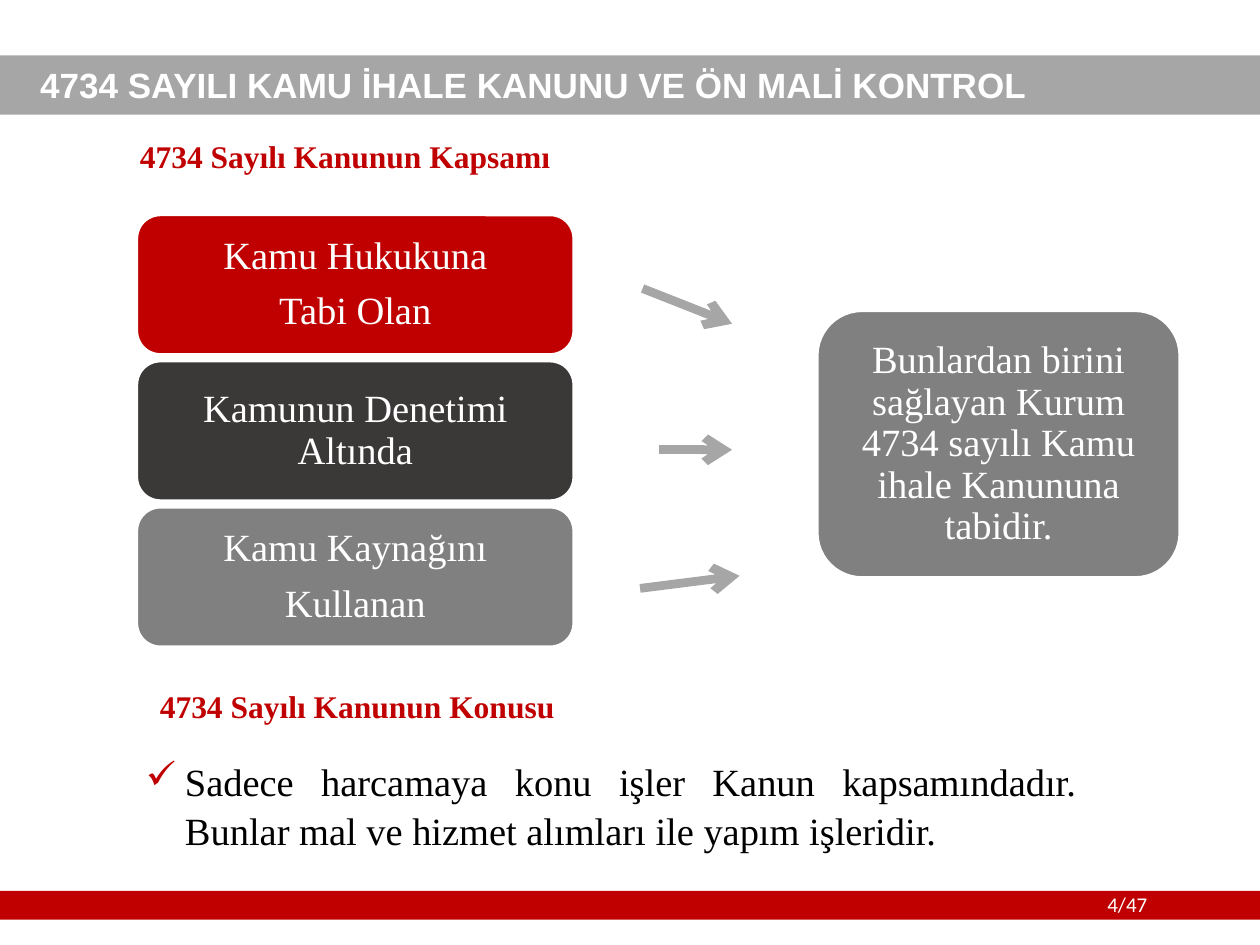
from lxml import etree
from pptx import Presentation
from pptx.dml.color import RGBColor
from pptx.enum.shapes import MSO_CONNECTOR, MSO_SHAPE
from pptx.enum.text import MSO_ANCHOR, MSO_AUTO_SIZE, PP_ALIGN
from pptx.oxml.ns import qn
from pptx.util import Inches, Pt

CENTER, JUSTIFY, LEFT = PP_ALIGN.CENTER, PP_ALIGN.JUSTIFY, PP_ALIGN.LEFT
TOP, MIDDLE = MSO_ANCHOR.TOP, MSO_ANCHOR.MIDDLE
RECTANGLE, ROUNDED = MSO_SHAPE.RECTANGLE, MSO_SHAPE.ROUNDED_RECTANGLE
STRAIGHT, NO_FIT = MSO_CONNECTOR.STRAIGHT, MSO_AUTO_SIZE.NONE

RED, DARK, GRAY, SILVER = "C00000", "3B3838", "808080", "A6A6A6"
WHITE, BLACK = "FFFFFF", "000000"
SERIF = "Times New Roman"

HEADING = {"name": SERIF, "size": Pt(18), "bold": True}
BODY = {"name": SERIF, "size": Pt(22), "bold": False}
BANNER = {"name": "Arial", "size": Pt(20), "bold": True}
NUMBER = {"name": "Calibri", "size": Pt(12), "bold": False}

CONDITION_LEFT, CONDITION_TOP, CONDITION_STEP = 1.09, 1.71, 1.16
CONDITIONS = [
    (["Kamu Hukukuna", "Tabi Olan"], RED),
    (["Kamunun Denetimi Altında"], DARK),
    (["Kamu Kaynağını", "Kullanan"], GRAY),
]
ARROWS = [(5.1, 2.29, 5.81, 2.57), (5.23, 3.57, 5.81, 3.57), (5.08, 4.67, 5.87, 4.57)]


def color(value):
    return RGBColor.from_string(value)


def set_attributes(target, values):
    for name, value in values.items():
        setattr(target, name, value)


def place(shape, left, top, width, height):
    lengths = {"left": left, "top": top, "width": width, "height": height}
    set_attributes(shape, {name: Inches(value) for name, value in lengths.items()})


def write(shape, lines, style, ink, align=LEFT, anchor=TOP, spacing=0.9, inset=(0.1, 0.05)):
    frame = shape.text_frame
    side, edge = (Inches(value) for value in inset)
    set_attributes(frame, {
        "word_wrap": True, "auto_size": NO_FIT, "vertical_anchor": anchor,
        "margin_left": side, "margin_right": side,
        "margin_top": edge, "margin_bottom": edge,
    })
    for index, line in enumerate(lines):
        para = frame.add_paragraph() if index else frame.paragraphs[0]
        set_attributes(para, {
            "alignment": align, "line_spacing": spacing,
            "space_before": Pt(8 if index else 0), "space_after": Pt(0),
        })
        span = para.add_run()
        span.text = line
        set_attributes(span.font, style)
        span.font.color.rgb = color(ink)


def add_text(page, area, lines, style, ink, **options):
    box = page.shapes.add_textbox(*(Inches(value) for value in area))
    write(box, lines, style, ink, **options)
    return box


def add_panel(page, kind, area, fill, outline=None):
    panel = page.shapes.add_shape(kind, *(Inches(value) for value in area))
    panel.shadow.inherit = False
    panel.fill.solid()
    panel.fill.fore_color.rgb = color(fill)
    if outline:
        panel.line.color.rgb = color(outline)
        panel.line.width = Pt(1)
    else:
        panel.line.fill.background()
    return panel


def add_card(page, area, lines, fill, inset):
    card = add_panel(page, ROUNDED, area, fill, WHITE)
    write(card, lines, BODY, WHITE, align=CENTER, anchor=MIDDLE, inset=inset)


def add_arrow(page, ends):
    arrow = page.shapes.add_connector(STRAIGHT, *(Inches(value) for value in ends))
    arrow.line.color.rgb = color(SILVER)
    arrow.line.width = Pt(5)
    etree.SubElement(arrow.line._get_or_add_ln(), qn("a:tailEnd"), type="arrow")
    etree.SubElement(arrow._element.spPr, qn("a:effectLst"))


def add_check(para, ink):
    properties = para._p.get_or_add_pPr()
    properties.set("marL", str(Inches(0.31)))
    properties.set("indent", str(-Inches(0.31)))
    bullet_color = etree.SubElement(properties, qn("a:buClr"))
    etree.SubElement(bullet_color, qn("a:srgbClr"), val=ink)
    etree.SubElement(properties, qn("a:buChar"), char="✓")


def main():
    deck = Presentation()
    deck.slide_width, deck.slide_height = Inches(10), Inches(7.5)
    page = deck.slides.add_slide(deck.slide_layouts[5])

    add_panel(page, RECTANGLE, (0, 7.07, 10, 0.23), RED)
    add_panel(page, RECTANGLE, (0, 0.44, 10, 0.47), SILVER)
    add_text(page, (0.22, 0.46, 9.05, 0.47),
             ["4734 SAYILI KAMU İHALE KANUNU VE ÖN MALİ KONTROL"],
             BANNER, WHITE, anchor=MIDDLE)
    add_text(page, (8.69, 7.03, 0.93, 0.3), ["4/47"], NUMBER, WHITE, spacing=1.0)

    title = page.shapes.title
    place(title, 1.01, 1.07, 8.99, 0.47)
    write(title, ["4734 Sayılı Kanunun Kapsamı"], HEADING, RED)

    for row, (lines, fill) in enumerate(CONDITIONS):
        area = (CONDITION_LEFT, CONDITION_TOP + row * CONDITION_STEP, 3.46, 1.1)
        add_card(page, area, lines, fill, (0.09, 0.05))
    for ends in ARROWS:
        add_arrow(page, ends)
    add_card(page, (6.49, 2.47, 2.87, 2.11),
             ["Bunlardan birini sağlayan Kurum 4734 sayılı Kamu ihale Kanununa tabidir."],
             GRAY, (0.11, 0.11))

    add_text(page, (1.17, 5.44, 8.83, 0.47), ["4734 Sayılı Kanunun Konusu"], HEADING, RED)
    subject = add_text(
        page, (1.06, 5.94, 7.58, 0.84),
        ["Sadece harcamaya konu işler Kanun kapsamındadır. "
         "Bunlar mal ve hizmet alımları ile yapım işleridir."],
        BODY, BLACK, align=JUSTIFY, spacing=1.07)
    add_check(subject.text_frame.paragraphs[0], RED)

    deck.save("out.pptx")


if __name__ == "__main__":
    main()
